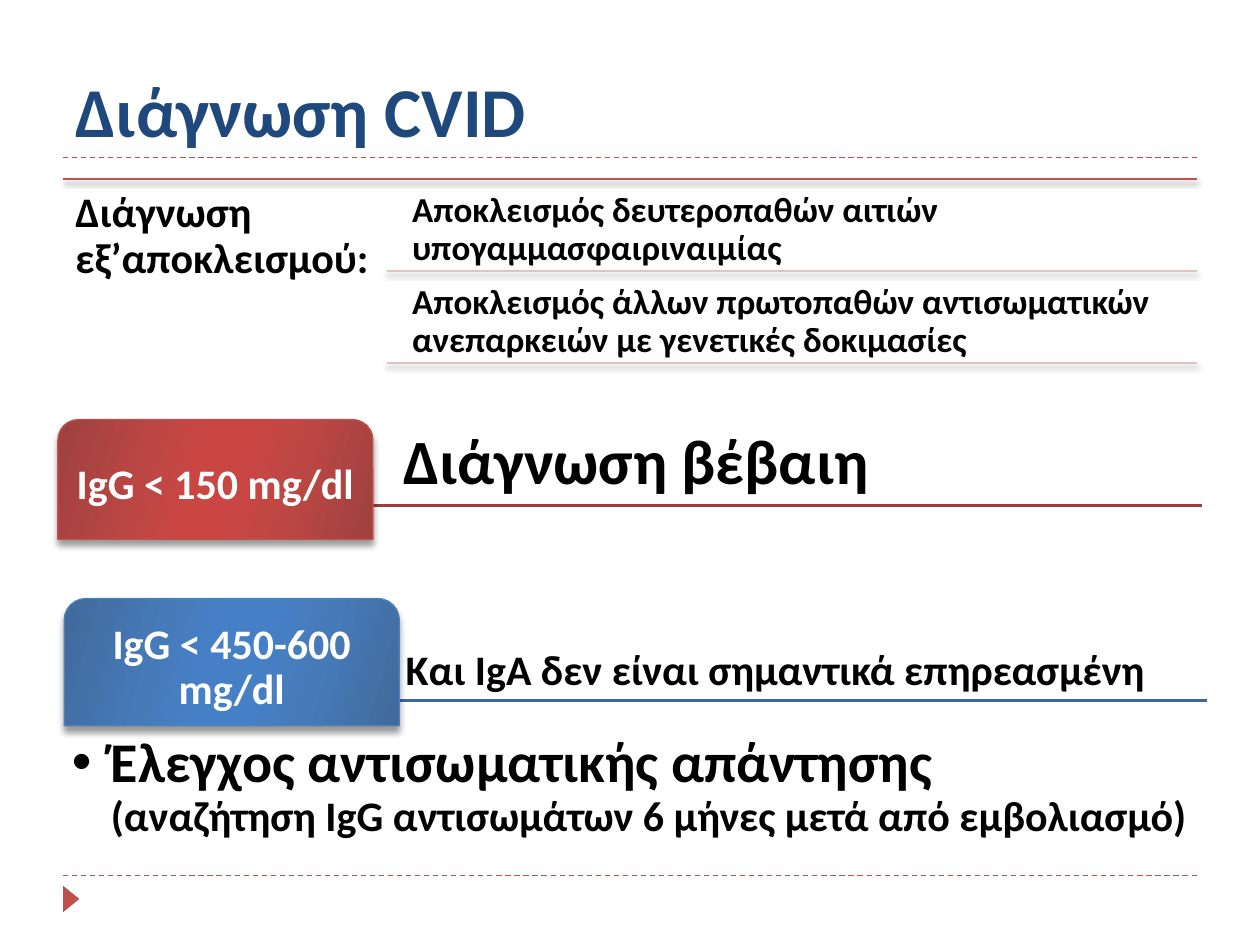
from pptx import Presentation
from pptx import util as u
from pptx.dml.color import RGBColor
from pptx.enum import dml, shapes, text
from pptx.oxml import parse_xml
from pptx.oxml.ns import nsdecls

PX = 9144
rgb = RGBColor.from_string


def write(shape, runs, color, anchor, insets, spacing=0.9, align=text.PP_ALIGN.LEFT):
    frame = shape.text_frame
    frame.word_wrap = True
    frame.auto_size = text.MSO_AUTO_SIZE.NONE
    frame.vertical_anchor = anchor
    frame.margin_left, frame.margin_top, frame.margin_right, frame.margin_bottom = [
        inset * PX for inset in insets
    ]
    paragraph = frame.paragraphs[0]
    paragraph.alignment = align
    paragraph.line_spacing = spacing
    paragraph.space_before = u.Pt(0)
    for index, (words, size) in enumerate(runs):
        if index:
            paragraph.add_line_break()
        run = paragraph.add_run()
        run.text = words
        run.font.name = "Calibri"
        run.font.size = u.Pt(size)
        run.font.bold = True
        run.font.color.rgb = rgb(color)
    return paragraph


def set_shadow(shape, blur=0, distance=0):
    shadow = ""
    if blur:
        shadow = (
            f'<a:outerShdw blurRad="{u.Pt(blur)}" dist="{u.Pt(distance)}" dir="5400000" rotWithShape="0">'
            '<a:srgbClr val="000000"><a:alpha val="40000"/></a:srgbClr></a:outerShdw>'
        )
    shape._element.spPr.append(
        parse_xml(f'<a:effectLst {nsdecls("a")}>{shadow}</a:effectLst>')
    )


presentation = Presentation()
presentation.slide_width = 1000 * PX
presentation.slide_height = 750 * PX
slide = presentation.slides.add_slide(presentation.slide_layouts[1])
top, middle, bottom = text.MSO_ANCHOR.TOP, text.MSO_ANCHOR.MIDDLE, text.MSO_ANCHOR.BOTTOM

title = slide.shapes.title
body = slide.placeholders[1]
for placeholder, box in ((title, (50, 17, 900, 108)), (body, (50, 576, 900, 124))):
    placeholder.left, placeholder.top, placeholder.width, placeholder.height = [
        length * PX for length in box
    ]
write(title, [("Διάγνωση CVID", 40)], "1F497D", bottom, (10, 5, 10, 5), 1)
bullet = write(
    body,
    [
        ("Έλεγχος αντισωματικής απάντησης", 32),
        ("(αναζήτηση IgG αντισωμάτων 6 μήνες μετά από εμβολιασμό)", 24),
    ],
    "000000", top, (7, 7, 7, 7),
)
properties = bullet._p.get_or_add_pPr()
properties.set("marL", str(31 * PX))
properties.set("indent", str(-31 * PX))

for left, right, y, color, width, dashed, shadowed in (
    (50, 950, 695, "C0504D", 0.75, True, False),
    (50, 950, 125, "C0504D", 0.75, True, False),
    (50, 950, 142, "C0504D", 0.75, False, True),
    (307, 950, 215, "E2C2C2", 0.75, False, True),
    (307, 950, 288, "E2C2C2", 0.75, False, True),
    (54, 954, 401, "9A403E", 1.5, False, False),
    (58, 958, 556, "3F6797", 1.5, False, False),
):
    rule = slide.shapes.add_connector(
        shapes.MSO_CONNECTOR.STRAIGHT, left * PX, y * PX, right * PX, y * PX
    )
    rule.line.color.rgb = rgb(color)
    rule.line.width = u.Pt(width)
    if dashed:
        rule.line.dash_style = dml.MSO_LINE.DASH
    if shadowed:
        set_shadow(rule, 3, 2)
    else:
        set_shadow(rule)

marker = slide.shapes.add_shape(
    shapes.MSO_SHAPE.ISOSCELES_TRIANGLE, 46 * PX, 707 * PX, 21 * PX, 13 * PX
)
marker.rotation = 90
marker.shadow.inherit = False
marker.fill.solid()
marker.fill.fore_color.rgb = rgb("C0504D")
marker.line.fill.background()

for box, words, size, anchor, inset in (
    ((50, 142, 257, 150), "Διάγνωση εξ’αποκλεισμού:", 24, top, 10),
    ((319, 145, 631, 70), "Αποκλεισμός δευτεροπαθών αιτιών υπογαμμασφαιριναιμίας", 20, top, 8),
    ((319, 218, 631, 70), "Αποκλεισμός άλλων πρωτοπαθών αντισωματικών ανεπαρκειών με γενετικές δοκιμασίες", 20, top, 8),
    ((313, 360, 617, 42), "Διάγνωση βέβαιη", 36, bottom, 7),
    ((317, 494, 617, 62), "Και IgA δεν είναι σημαντικά επηρεασμένη", 24, bottom, 5),
):
    label = slide.shapes.add_textbox(*[length * PX for length in box])
    write(label, [(words, size)], "000000", anchor, [inset] * 4)

for box, words, edge, outer, inner, center in (
    ((46, 333, 250, 95), "IgG < 150 mg/dl", "C0504D", "9D413F", "BD4744", "CA4643"),
    ((51, 475, 266, 101), "IgG < 450-600 mg/dl", "4F81BD", "416A9B", "467BBA", "4580C7"),
):
    tab = slide.shapes.add_shape(
        shapes.MSO_SHAPE.ROUND_2_SAME_RECTANGLE, *[length * PX for length in box]
    )
    tab.adjustments[0] = 0.17
    stops = zip((0, 30, 45, 55, 73, 100), (outer, inner, center, center, inner, outer))
    gradient = "".join(
        f'<a:gs pos="{position * 1000}"><a:srgbClr val="{color}"/></a:gs>'
        for position, color in stops
    )
    tab._element.spPr.append(parse_xml(
        f'<a:gradFill {nsdecls("a")} rotWithShape="1"><a:gsLst>{gradient}</a:gsLst>'
        '<a:lin ang="960000" scaled="0"/></a:gradFill>'
    ))
    tab.line.color.rgb = rgb(edge)
    tab.line.width = u.Pt(0.75)
    set_shadow(tab, 4, 3.4)
    write(tab, [(words, 24)], "FFFFFF", middle, (10, 10, 10, 5), align=text.PP_ALIGN.CENTER)

presentation.save("out.pptx")
